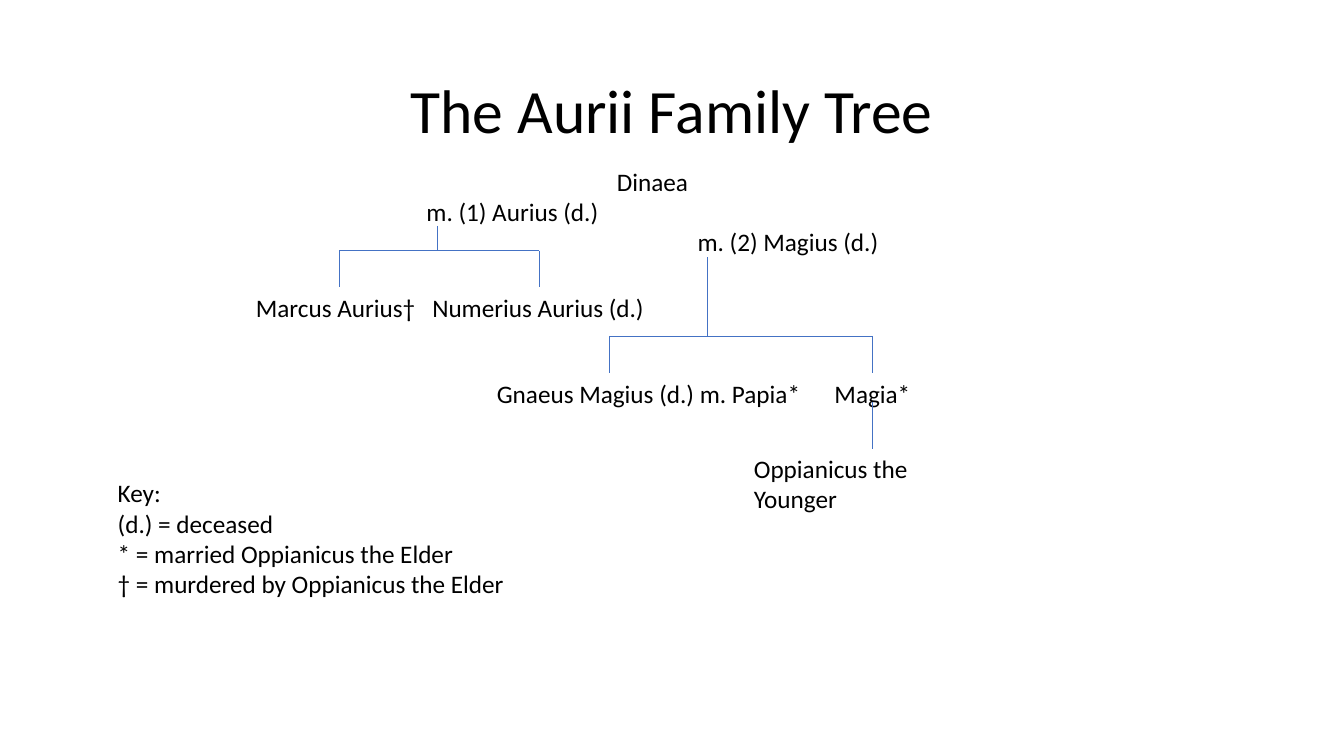
"""Build the Aurii family tree slide."""
from lxml import etree
from pptx import Presentation
from pptx.dml.color import RGBColor
from pptx.enum.shapes import MSO_CONNECTOR
from pptx.enum.text import MSO_ANCHOR, PP_ALIGN
from pptx.oxml.ns import qn
from pptx.util import Pt

BLACK = RGBColor(0x00, 0x00, 0x00)
BLUE = RGBColor(0x44, 0x72, 0xC4)
LEFT, CENTER, RIGHT = PP_ALIGN.LEFT, PP_ALIGN.CENTER, PP_ALIGN.RIGHT
STRAIGHT = MSO_CONNECTOR.STRAIGHT

prs = Presentation()
prs.slide_width, prs.slide_height = Pt(960), Pt(540)
s = prs.slides.add_slide(prs.slide_layouts[6])


def add_text(text, x, y, w, h, aligns=(LEFT,), size=18, wrap=True):
    tf = s.shapes.add_textbox(Pt(x), Pt(y), Pt(w), Pt(h)).text_frame
    tf.word_wrap = wrap
    tf.text = text
    for i, p in enumerate(tf.paragraphs):
        p.alignment = aligns[i % len(aligns)]
        for r in p.runs:
            r.font.name = "Calibri"
            r.font.size = Pt(size)
            r.font.color.rgb = BLACK
    return tf


def add_line(x1, y1, x2, y2):
    c = s.shapes.add_connector(STRAIGHT, Pt(x1), Pt(y1), Pt(x2), Pt(y2))
    c.line.color.rgb = BLUE
    c.line.width = Pt(0.5)
    etree.SubElement(c._element.spPr, qn("a:effectLst"))


title = add_text("The Aurii Family Tree", 66, 28.8, 828, 104.4, (CENTER,), 44)
title.vertical_anchor = MSO_ANCHOR.MIDDLE
title.paragraphs[0].line_spacing = 0.9

add_text("Dinaea\nm. (1) Aurius (d.)\nm. (2) Magius (d.)",
         297.5, 115.2, 337, 72.7, (CENTER, LEFT, RIGHT))

children = [
    ("Marcus Aurius†", 175.7, 205.2, 134),
    ("Numerius Aurius (d.)", 301.7, 205.2, 167),
    ("Gnaeus Magius (d.) m. Papia*", 347.8, 266.4, 234),
    ("Magia*", 589, 266.4, 69),
]
for name, x, y, w in children:
    add_text(name, x, y, w, 29, wrap=False)
add_text("Oppianicus the Younger", 531.4, 320.4, 180, 51)

branches = [
    (312.5, 161.3, 179, 205.2, (242.5, 385)),
    (505.5, 183.6, 240, 266.4, (435.6, 623)),
]
for parent_x, top, bar_y, bottom, child_xs in branches:
    add_line(parent_x, top, parent_x, bar_y)
    add_line(child_xs[0], bar_y, child_xs[-1], bar_y)
    for x in child_xs:
        add_line(x, bar_y, x, bottom)
add_line(623, 287.3, 623, 320.4)

add_text("Key:\n(d.) = deceased\n* = married Oppianicus the Elder\n"
         "† = murdered by Oppianicus the Elder", 77, 337.7, 450, 94.5)

prs.save("out.pptx")
